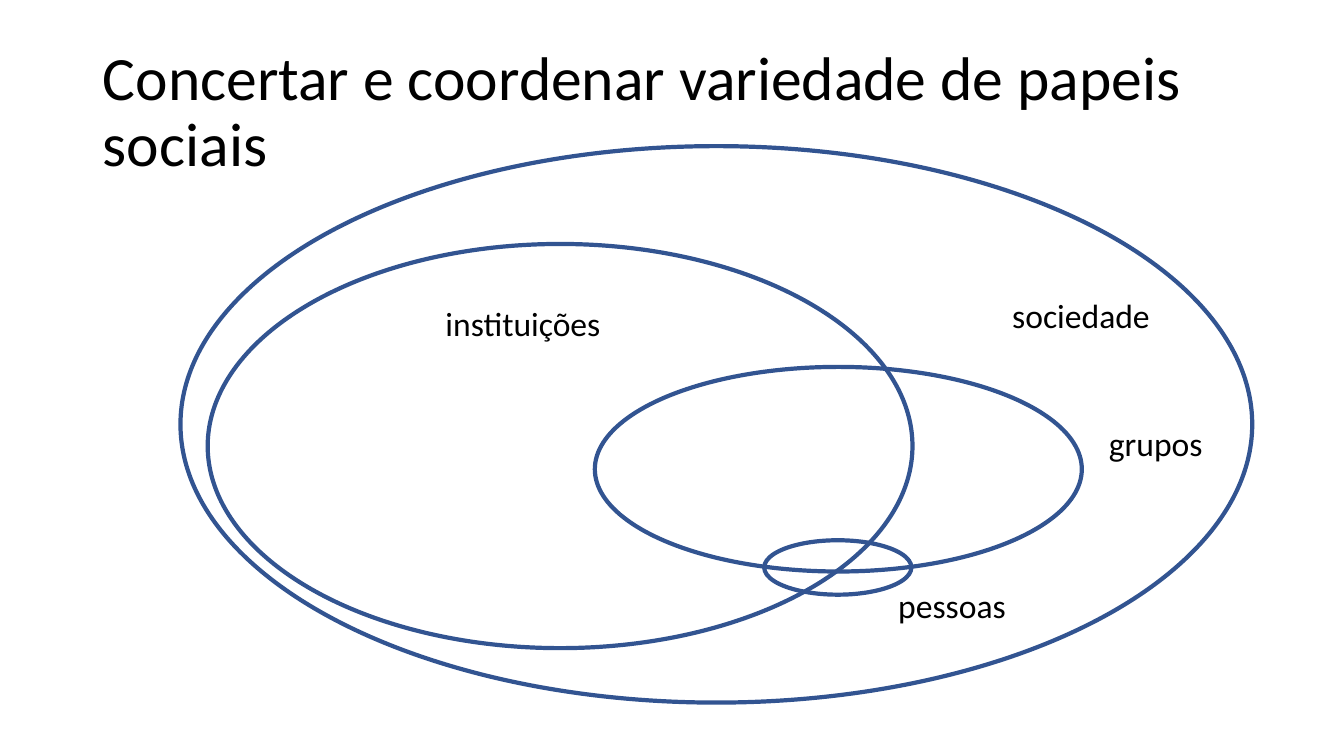
from pptx import Presentation
from pptx.dml.color import RGBColor
from pptx.enum.shapes import MSO_SHAPE
from pptx.enum.text import MSO_ANCHOR, MSO_AUTO_SIZE, PP_ALIGN
from pptx.util import Emu, Pt

PX = 9144
SLIDE_SIZE = (1333, 750)
TITLE_BOX = (92, 40, 1150, 145)
DIAGRAM_BOX = (179, 145, 1063, 552)
FONT = "Calibri"
INK = "000000"
OUTLINE = "325491"

CIRCLES = [
    ("sociedade", (0, 0, 1063, 552), (815, 143, 158, 50)),
    ("pessoas", (579, 391, 146, 54), (702, 430, 128, 50)),
    ("grupos", (411, 219, 483, 203), (911, 270, 114, 50)),
    ("instituições", (27, 97, 699, 401), (253, 151, 176, 50)),
]


def px(length):
    """Turn a length in px into EMU."""
    return Emu(length * PX)


def colour(hex_code):
    """Turn a hex string into a colour."""
    return RGBColor.from_string(hex_code)


def place(part, box):
    """Move and size a part to a box in px."""
    part.left, part.top, part.width, part.height = map(px, box)


def within(region, box):
    """Shift a box by the corner of its region."""
    return (region[0] + box[0], region[1] + box[1], box[2], box[3])


def write(paragraph, words, size):
    """Add one formatted run to a paragraph."""
    run = paragraph.add_run()
    run.text = words
    run.font.name = FONT
    run.font.size = Pt(size)
    run.font.color.rgb = colour(INK)


def add_title(slide, box, words):
    """Place and fill the slide title."""
    heading = slide.shapes.title
    place(heading, box)
    frame = heading.text_frame
    frame.auto_size = MSO_AUTO_SIZE.NONE
    frame.word_wrap = True
    frame.vertical_anchor = MSO_ANCHOR.MIDDLE
    paragraph = frame.paragraphs[0]
    paragraph.alignment = PP_ALIGN.LEFT
    paragraph.line_spacing = 0.9
    write(paragraph, words, 44)


def add_circle(slide, box):
    """Draw one outlined ellipse."""
    circle = slide.shapes.add_shape(MSO_SHAPE.OVAL, *map(px, box))
    circle.shadow.inherit = False
    circle.fill.background()
    circle.line.color.rgb = colour(OUTLINE)
    circle.line.width = Pt(3)


def add_label(slide, box, words):
    """Write the name of one circle."""
    label = slide.shapes.add_textbox(*map(px, box))
    frame = label.text_frame
    frame.word_wrap = False
    frame.auto_size = MSO_AUTO_SIZE.SHAPE_TO_FIT_TEXT
    write(frame.paragraphs[0], words, 24)


def add_diagram(slide, box):
    """Draw the overlapping social circles and their names."""
    for name, circle_box, label_box in CIRCLES:
        add_circle(slide, within(box, circle_box))
        add_label(slide, within(box, label_box), name)


def main():
    """Build and save the slide."""
    deck = Presentation()
    deck.slide_width, deck.slide_height = map(px, SLIDE_SIZE)
    slide = deck.slides.add_slide(deck.slide_layouts.get_by_name("Title Only"))
    add_title(slide, TITLE_BOX, "Concertar e coordenar variedade de papeis sociais")
    add_diagram(slide, DIAGRAM_BOX)
    deck.save("out.pptx")


if __name__ == "__main__":
    main()
